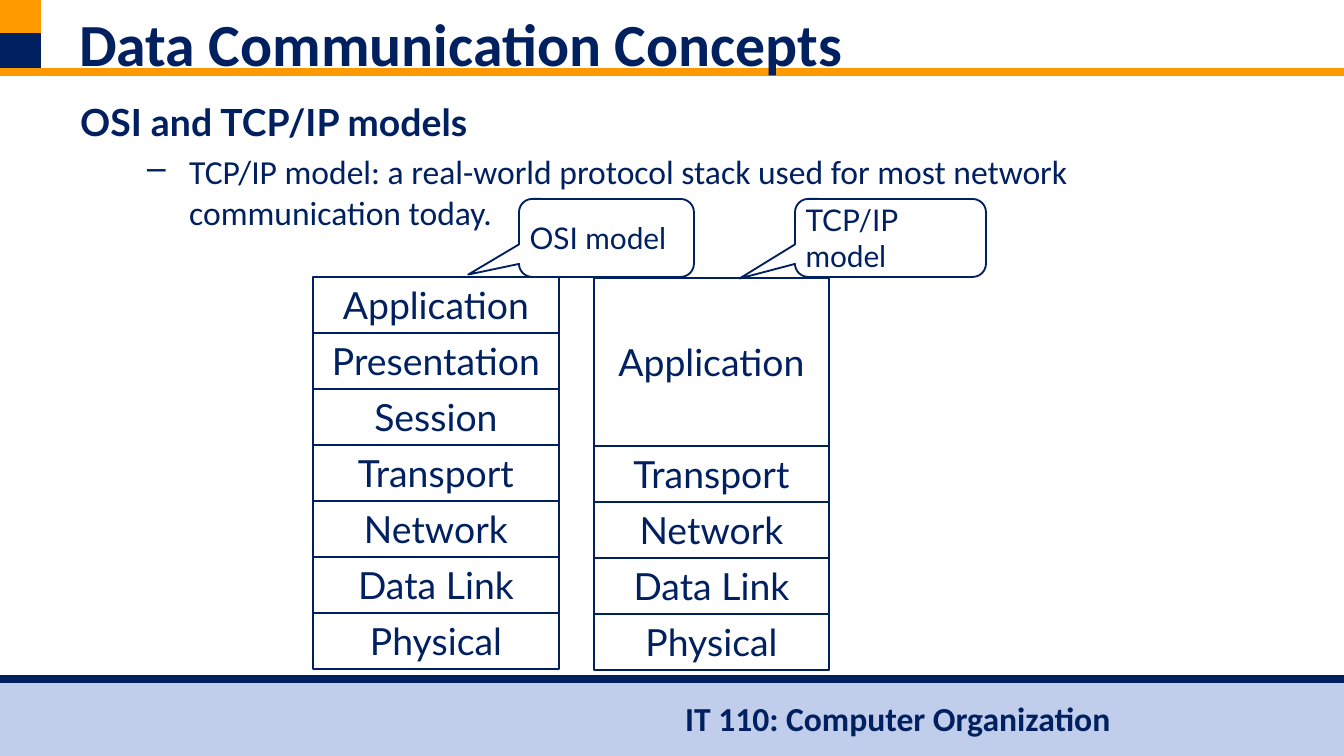
from lxml import etree
from pptx import Presentation, util as u
from pptx.dml.color import RGBColor
from pptx.enum import shapes, text
from pptx.oxml.ns import qn

NAVY, ORANGE, PALE, WHITE = "002060", "FF9900", "C0CDEB", "FFFFFF"
EMU_PER_PX = 914400 / 134.4
WIDTH, HEIGHT = 1344, 756

TITLE = "Data Communication Concepts"
HEADING = "OSI and TCP/IP models"
POINT = ("TCP/IP model: a real-world protocol stack used for most "
         "network communication today.")
FOOTER = "IT 110: Computer Organization"

ROW_HEIGHT = 56
# left, top, width, layers as (name, rows spanned)
STACKS = [
    (313, 277, 246, [("Application", 1), ("Presentation", 1), ("Session", 1),
                     ("Transport", 1), ("Network", 1), ("Data Link", 1),
                     ("Physical", 1)]),
    (594, 278, 235, [("Application", 3), ("Transport", 1), ("Network", 1),
                     ("Data Link", 1), ("Physical", 1)]),
]
# label, box, adjustments
CALLOUTS = [
    ("OSI model", (519, 199, 175, 78), (-0.79, 0.47, 0.17)),
    ("TCP/IP model", (795, 199, 191, 78), (-0.79, 0.52, 0.17)),
]


def px(value):
    return u.Emu(round(value * EMU_PER_PX))


def color(value):
    return RGBColor.from_string(value)


def add_run(paragraph, words, size, font="Calibri", bold=False):
    run = paragraph.add_run()
    run.text = words
    run.font.name = font
    run.font.size = u.Pt(size)
    run.font.bold = bold
    run.font.color.rgb = color(NAVY)


def add_shape(slide, kind, box, fill=None, line_width=None):
    shape = slide.shapes.add_shape(kind, *map(px, box))
    shape.shadow.inherit = False
    if fill:
        shape.fill.solid()
        shape.fill.fore_color.rgb = color(fill)
    else:
        shape.fill.background()
    if line_width:
        shape.line.color.rgb = color(NAVY)
        shape.line.width = u.Pt(line_width)
    else:
        shape.line.fill.background()
    return shape


def label(shape, words, size, align):
    frame = shape.text_frame
    frame.word_wrap = True
    frame.vertical_anchor = text.MSO_ANCHOR.MIDDLE
    paragraph = frame.paragraphs[0]
    paragraph.alignment = align
    add_run(paragraph, words, size, "Lato")


def add_text_frame(slide, box):
    frame = slide.shapes.add_textbox(*map(px, box)).text_frame
    frame.word_wrap = True
    return frame


def add_rule(slide, y, line_color):
    """Draw a horizontal line across the whole slide."""
    line = slide.shapes.add_connector(
        shapes.MSO_CONNECTOR.STRAIGHT, px(0), px(y), px(WIDTH), px(y))
    line.line.color.rgb = color(line_color)
    line.line.width = u.Pt(4.5)
    etree.SubElement(line._element.spPr, qn("a:effectLst"))


def set_hanging(paragraph, left, hang, bullet=None):
    properties = paragraph._p.get_or_add_pPr()
    properties.set("marL", str(px(left)))
    properties.set("indent", str(px(-hang)))
    if bullet:
        bullet_color = etree.SubElement(properties, qn("a:buClr"))
        etree.SubElement(bullet_color, qn("a:srgbClr"), val=NAVY)
        etree.SubElement(properties, qn("a:buChar"), char=bullet)


def add_frame(slide):
    """Add the footer band, corner squares and rules."""
    rectangle = shapes.MSO_SHAPE.RECTANGLE
    add_shape(slide, rectangle, (0, 680, WIDTH, HEIGHT - 680), PALE)
    footer = add_text_frame(slide, (672, 691, 456, 54))
    add_run(footer.paragraphs[0], FOOTER, 18, bold=True)
    add_shape(slide, rectangle, (0, 30, 41, 42), NAVY)
    add_rule(slide, 72, ORANGE)
    add_shape(slide, rectangle, (0, 0, 41, 33), ORANGE)
    add_rule(slide, 679, NAVY)


def add_body(slide):
    frame = add_text_frame(slide, (67, 93, 1210, 499))
    heading = frame.paragraphs[0]
    set_hanging(heading, 50, 50)
    add_run(heading, HEADING, 20, "Lato", bold=True)
    point = frame.add_paragraph()
    point.level = 1
    set_hanging(point, 109, 42, "–")
    point.space_before = u.Pt(3.6)
    add_run(point, POINT, 18)


def add_stack(slide, left, top, width, layers):
    for name, rows in layers:
        height = rows * ROW_HEIGHT
        layer = add_shape(slide, shapes.MSO_SHAPE.RECTANGLE,
                          (left, top, width, height), line_width=0.75)
        label(layer, name, 20, text.PP_ALIGN.CENTER)
        top += height


def add_callout(slide, words, box, adjustments):
    callout = add_shape(slide, shapes.MSO_SHAPE.ROUNDED_RECTANGULAR_CALLOUT,
                        box, WHITE, line_width=1)
    for index, value in enumerate(adjustments):
        callout.adjustments[index] = value
    frame = callout.text_frame
    frame.margin_left = frame.margin_right = u.Inches(0.05)
    label(callout, words, 16, text.PP_ALIGN.LEFT)


def main():
    presentation = Presentation()
    presentation.slide_width = px(WIDTH)
    presentation.slide_height = px(HEIGHT)
    slide = presentation.slides.add_slide(presentation.slide_layouts[6])
    add_frame(slide)
    add_body(slide)
    title = add_text_frame(slide, (66, 0, 1212, 71))
    add_run(title.paragraphs[0], TITLE, 32, bold=True)
    for stack in STACKS:
        add_stack(slide, *stack)
    for callout in CALLOUTS:
        add_callout(slide, *callout)
    presentation.save("out.pptx")


if __name__ == "__main__":
    main()
